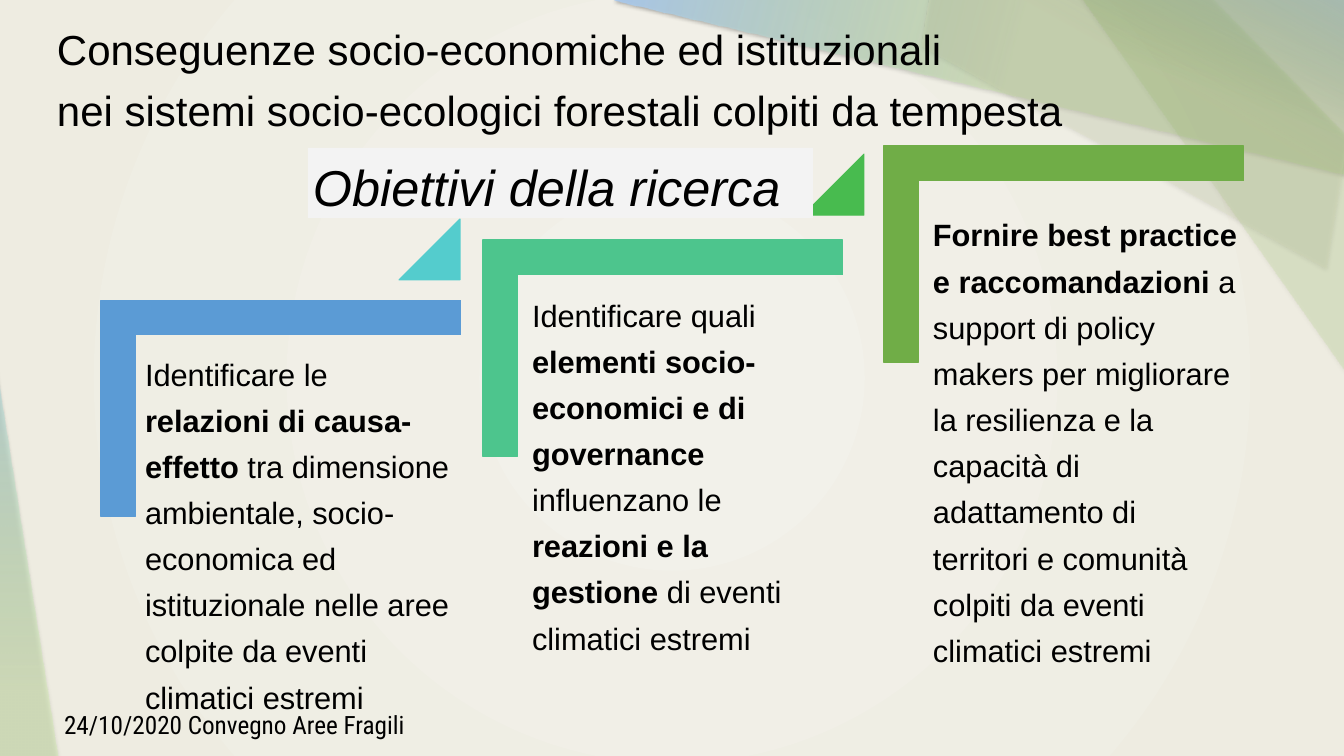
"""Build the slide on the research objectives for storm-hit forest systems."""
from pptx import Presentation, util as u
from pptx.dml.color import RGBColor
from pptx.enum import shapes, text
from pptx.oxml import parse_xml
from pptx.oxml.ns import nsdecls

PX = 914400 / 100.8
COLOURS = {
    "ink": "000000", "label": "F3F3F3", "ivory": "F2F1EA", "sand": "EEECE1",
    "pale green": "C8E9A1", "leaf": "8CC943", "olive": "D5DBAF", "sky": "A2C3FF",
    "blue": "5B9BD5", "aqua": "54CCCD", "mint": "4DC58D", "emerald": "48BB4F",
    "green": "70AD47",
}
CIRCLE = '<a:path path="circle"><a:fillToRect l="50000" t="50000" r="50000" b="50000"/></a:path>'

SHARDS = [
    ([(-171, 750), (64, 799), (-41, 133)], (17, "pale green", 37), 270),
    ([(920, -299), (615, 0), (1396, 186)], (46, "pale green", 37), 195),
    ([(1468, 42), (985, -139), (1344, 371)], (53, "leaf", 13), 290),
    ([(1326, 268), (922, 46), (966, -219), (1368, 4)], (44, "olive", 20), 299),
]
STEPS = [
    ((101, 300), "blue", (136, 337, 325, 361), [
        ("Identificare le ", False),
        ("relazioni di causa-effetto ", True),
        ("tra dimensione ambientale, socio-economica ed istituzionale nelle aree "
         "colpite da eventi climatici estremi", False)]),
    ((483, 240), "mint", (523, 278, 325, 361), [
        ("Identificare quali ", False),
        ("elementi socio-economici e di governance ", True),
        ("influenzano le ", False),
        ("reazioni e la gestione", True),
        (" di eventi climatici estremi", False)]),
    ((884, 146), "green", (924, 198, 325, 448), [
        ("Fornire best practice e raccomandazioni ", True),
        ("a support di policy makers per migliorare la resilienza e la capacità di "
         "adattamento di territori e comunità colpiti da eventi climatici estremi", False)]),
]
TRIANGLES = [((399, 219), "aqua"), ((803, 154), "emerald")]


def px(*lengths):
    return [u.Emu(round(length * PX)) for length in lengths]


def colour(name):
    return RGBColor.from_string(COLOURS[name])


def paint_gradient(element, stops, direction):
    stop_xml = "".join(
        f'<a:gs pos="{position * 1000}"><a:srgbClr val="{COLOURS[name]}">'
        f'<a:alpha val="{alpha * 1000}"/></a:srgbClr></a:gs>'
        for position, name, alpha in stops)
    gradient = parse_xml(
        f'<a:gradFill {nsdecls("a")} rotWithShape="1"><a:gsLst>{stop_xml}</a:gsLst>'
        f'{direction}</a:gradFill>')
    empty_fill = element.xpath(".//a:noFill")[0]
    empty_fill.getparent().replace(empty_fill, gradient)


def add_polygon(slide, points):
    builder = slide.shapes.build_freeform(*points[0], scale=PX)
    builder.add_line_segments(points[1:], close=True)
    shape = builder.convert_to_shape()
    shape.shadow.inherit = False
    return shape


def add_shard(slide, points, first_stop, angle):
    shape = add_polygon(slide, points)
    shape.fill.background()
    paint_gradient(shape.element, [first_stop, (100, "sky", 100)],
                   f'<a:lin ang="{angle * 60000}" scaled="0"/>')
    shape.line.fill.background()
    effects = shape.element.xpath("./p:spPr/a:effectLst")[0]
    effects.append(parse_xml(
        f'<a:outerShdw {nsdecls("a")} blurRad="38100" dist="22860" dir="5400000" '
        f'rotWithShape="0"><a:srgbClr val="{COLOURS["ink"]}"><a:alpha val="35000"/>'
        '</a:srgbClr></a:outerShdw>'))


def add_solid_polygon(slide, points, name):
    shape = add_polygon(slide, points)
    shape.fill.solid()
    shape.fill.fore_color.rgb = colour(name)
    shape.line.color.rgb = colour(name)
    shape.line.width = u.Pt(0.75)


def add_bracket(slide, corner, name, width=360, height=216, thickness=35):
    left, top = corner
    inner_left, inner_top = left + thickness, top + thickness
    right, bottom = left + width, top + height
    add_solid_polygon(slide, [
        (left, top), (right, top), (right, inner_top), (inner_left, inner_top),
        (inner_left, bottom), (left, bottom)], name)


def add_triangle(slide, corner, name, side=61):
    left, top = corner
    right, bottom = left + side, top + side
    add_solid_polygon(slide, [(left, bottom), (right, top), (right, bottom)], name)


def write(shape, runs, size, spacing, inset=5, font="Arial", italic=False):
    frame = shape.text_frame
    frame.word_wrap = True
    frame.auto_size = text.MSO_AUTO_SIZE.NONE
    frame.vertical_anchor = text.MSO_ANCHOR.TOP
    frame.margin_left, frame.margin_top, frame.margin_right, frame.margin_bottom = px(*[inset] * 4)
    paragraph = frame.paragraphs[0]
    paragraph.alignment = text.PP_ALIGN.LEFT
    paragraph.line_spacing = spacing
    paragraph.space_before = u.Pt(0)
    for wording, bold in runs:
        for index, line in enumerate(wording.split("\n")):
            if index:
                paragraph.add_line_break()
            run = paragraph.add_run()
            run.text = line
            run.font.name = font
            run.font.size = u.Pt(size)
            run.font.bold = bold
            run.font.italic = italic
            run.font.color.rgb = colour("ink")


def set_title(slide):
    title = slide.shapes.title
    title.left, title.top, title.width, title.height = px(52, 7, 1198, 128)
    write(title, [("Conseguenze socio-economiche ed istituzionali\n"
                   "nei sistemi socio-ecologici forestali colpiti da tempesta", False)], 30, 1.22)


def add_heading(slide):
    heading = slide.shapes.add_shape(shapes.MSO_SHAPE.RECTANGLE, *px(308, 148, 505, 70))
    heading.shadow.inherit = False
    heading.fill.solid()
    heading.fill.fore_color.rgb = colour("label")
    heading.line.fill.background()
    write(heading, [("Obiettivi della ricerca", False)], 36, 1.05, italic=True)


def main():
    presentation = Presentation()
    presentation.slide_width, presentation.slide_height = px(1344, 756)
    slide = presentation.slides.add_slide(presentation.slide_layouts[5])
    slide.background.fill.background()
    paint_gradient(slide.element, [(0, "ivory", 100), (100, "sand", 100)], CIRCLE)
    for points, first_stop, angle in SHARDS:
        add_shard(slide, points, first_stop, angle)
    for corner, name, box, runs in STEPS:
        add_bracket(slide, corner, name)
        write(slide.shapes.add_textbox(*px(*box)), runs, 22, 1.25, inset=9)
    for corner, name in TRIANGLES:
        add_triangle(slide, corner, name)
    add_heading(slide)
    write(slide.shapes.add_textbox(*px(59, 703, 415, 41)),
          [("24/10/2020 Convegno Aree Fragili", False)], 18, 1.05, font="Roboto Condensed")
    set_title(slide)
    title_element = slide.shapes.title.element
    title_element.getparent().append(title_element)
    presentation.save("out.pptx")


if __name__ == "__main__":
    main()
